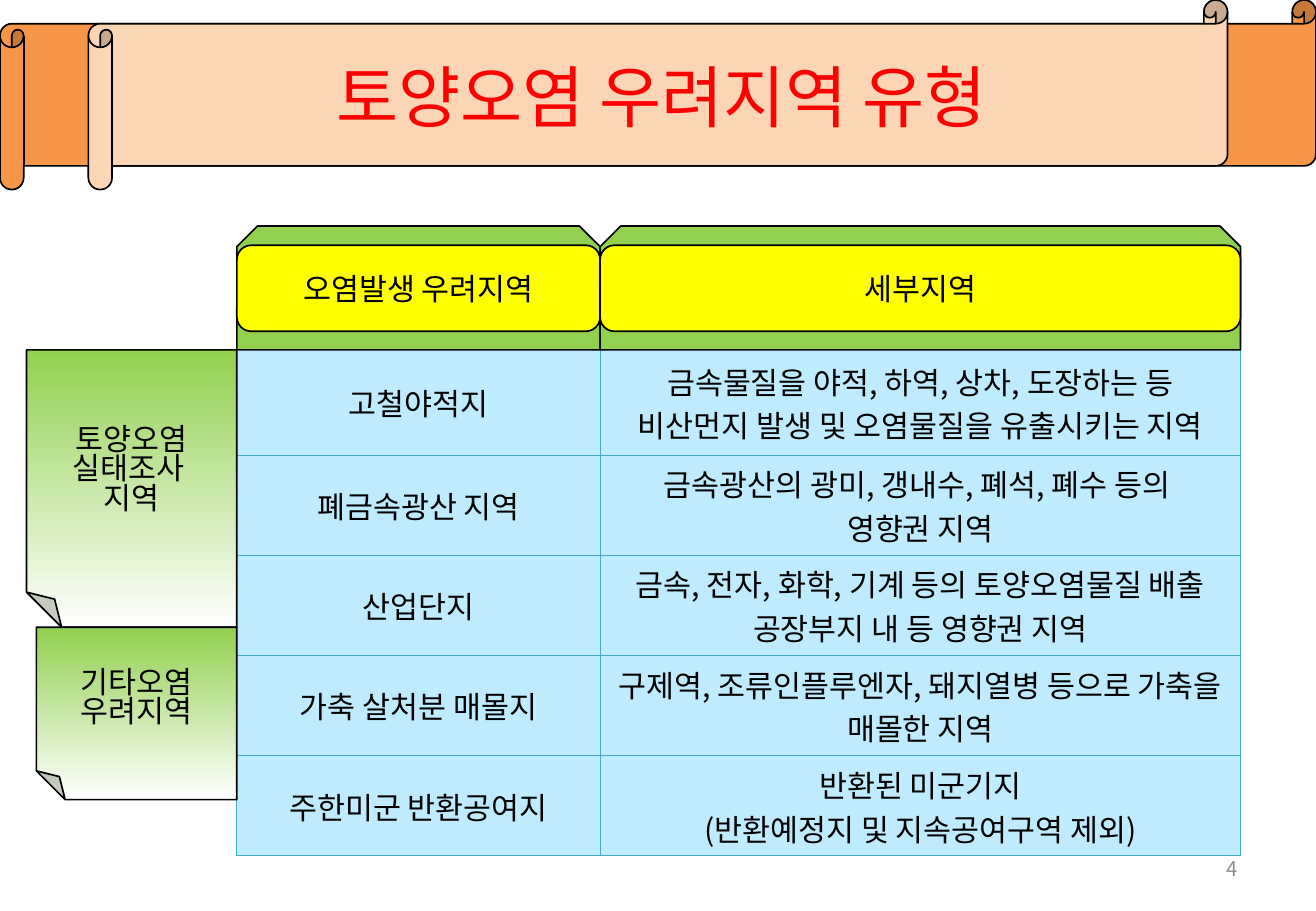
from dataclasses import dataclass

from lxml import etree
from pptx import Presentation
from pptx.dml.color import RGBColor
from pptx.enum.shapes import MSO_SHAPE
from pptx.enum.text import MSO_ANCHOR, PP_ALIGN
from pptx.oxml.ns import qn
from pptx.util import Pt


@dataclass(frozen=True)
class Theme:
    font: str = "Noto Sans CJK KR"
    title_size: int = 40
    body_size: int = 18
    number_size: int = 12
    black: str = "000000"
    red: str = "FF0000"
    gray: str = "8C8C8C"
    white: str = "FFFFFF"
    orange: str = "F79646"
    peach: str = "FCD5B5"
    green: str = "92D050"
    yellow: str = "FFFF00"
    sky: str = "BFEBFF"
    border: str = "46AAC5"


THEME = Theme()

# Shared layout in points: the table columns also carry the headings
TABLE_LEFT, TABLE_TOP = 140.4, 207.4
COLUMN_WIDTHS = (215.3, 379.6)
ROW_HEIGHTS = (62.6, 46, 46, 46, 46)

HEADINGS = ("오염발생 우려지역", "세부지역")
AREAS = (
    ("고철야적지", "금속물질을 야적, 하역, 상차, 도장하는 등 비산먼지 발생 및 오염물질을 유출시키는 지역"),
    ("폐금속광산 지역", "금속광산의 광미, 갱내수, 폐석, 폐수 등의 \n영향권 지역"),
    ("산업단지", "금속, 전자, 화학, 기계 등의 토양오염물질 배출 공장부지 내 등 영향권 지역"),
    ("가축 살처분 매몰지", "구제역, 조류인플루엔자, 돼지열병 등으로 가축을 매몰한 지역"),
    ("주한미군 반환공여지", "반환된 미군기지\n(반환예정지 및 지속공여구역 제외)"),
)
# Text, left, top, height of each group label
GROUPS = (
    ("토양오염\n실태조사 \n지역", 15.8, 207.4, 164.4),
    ("기타오염\n우려지역", 21.6, 371.8, 102.2),
)


def write_text(text_frame, text, size=THEME.body_size, color=THEME.black,
               align=PP_ALIGN.CENTER, line_spacing=1.0):
    text_frame.word_wrap = True
    text_frame.vertical_anchor = MSO_ANCHOR.MIDDLE
    text_frame.text = text
    for paragraph in text_frame.paragraphs:
        paragraph.alignment = align
        paragraph.line_spacing = line_spacing
        paragraph.space_before = Pt(0)
        for run in paragraph.runs:
            run.font.name = THEME.font
            run.font.size = Pt(size)
            run.font.color.rgb = RGBColor.from_string(color)
            east_asian = etree.SubElement(run.font._element, qn("a:ea"))
            east_asian.set("typeface", THEME.font)


def add_box(slide, kind, left, top, width, height, fill):
    shape = slide.shapes.add_shape(kind, Pt(left), Pt(top), Pt(width), Pt(height))
    shape.shadow.inherit = False
    shape.fill.solid()
    shape.fill.fore_color.rgb = RGBColor.from_string(fill)
    shape.line.color.rgb = RGBColor.from_string(THEME.black)
    shape.line.width = Pt(1)
    return shape


def add_title(slide, text):
    add_box(slide, MSO_SHAPE.HORIZONTAL_SCROLL, 0, 0, 780, 112.4, THEME.orange)
    add_box(slide, MSO_SHAPE.HORIZONTAL_SCROLL, 52.4, 0, 675.2, 112.4, THEME.peach)
    title = slide.shapes.title
    title.left, title.top, title.width, title.height = Pt(41), Pt(11.5), Pt(702), Pt(90)
    write_text(title.text_frame, text, size=THEME.title_size, color=THEME.red)
    # Bring the title in front of the scrolls
    slide.shapes._spTree.append(title._element)


def add_heading(slide, text, left, width):
    add_box(slide, MSO_SHAPE.SNIP_2_SAME_RECTANGLE, left, 134, width, 73.4, THEME.green)
    label = add_box(slide, MSO_SHAPE.ROUNDED_RECTANGLE, left, 145.4, width, 51, THEME.yellow)
    write_text(label.text_frame, text)


def add_group_label(slide, text, left, top, height):
    shape = add_box(slide, MSO_SHAPE.FOLDED_CORNER, left, top, TABLE_LEFT - left,
                    height, THEME.green)
    shape._element.spPr.get_or_add_xfrm().set("flipH", "1")
    shape.fill.gradient()
    shape.fill.gradient_angle = 270
    for stop, position, color in zip(shape.fill.gradient_stops, (0, 1),
                                     (THEME.green, THEME.white)):
        stop.position = position
        stop.color.rgb = RGBColor.from_string(color)
    write_text(shape.text_frame, text, line_spacing=0.82)


def set_borders(cell):
    properties = cell._tc.get_or_add_tcPr()
    for index, side in enumerate(("a:lnL", "a:lnR", "a:lnT", "a:lnB")):
        line = etree.Element(qn(side), w=str(Pt(0.75)))
        fill = etree.SubElement(line, qn("a:solidFill"))
        etree.SubElement(fill, qn("a:srgbClr"), val=THEME.border)
        properties.insert(index, line)


def add_area_table(slide):
    frame = slide.shapes.add_table(
        len(AREAS), len(COLUMN_WIDTHS), Pt(TABLE_LEFT), Pt(TABLE_TOP),
        Pt(sum(COLUMN_WIDTHS)), Pt(sum(ROW_HEIGHTS)))
    table = frame.table
    table.first_row = table.horz_banding = False
    for column, width in zip(table.columns, COLUMN_WIDTHS):
        column.width = Pt(width)
    for row, height, texts in zip(table.rows, ROW_HEIGHTS, AREAS):
        row.height = Pt(height)
        for cell, text in zip(row.cells, texts):
            cell.fill.solid()
            cell.fill.fore_color.rgb = RGBColor.from_string(THEME.sky)
            cell.vertical_anchor = MSO_ANCHOR.MIDDLE
            write_text(cell.text_frame, text)
            set_borders(cell)


def add_page_number(slide, number):
    box = slide.shapes.add_textbox(Pt(558.7), Pt(500.4), Pt(182.2), Pt(28.8))
    write_text(box.text_frame, number, size=THEME.number_size, color=THEME.gray,
               align=PP_ALIGN.RIGHT)


def main():
    presentation = Presentation()
    presentation.slide_width, presentation.slide_height = Pt(780), Pt(540)
    slide = presentation.slides.add_slide(presentation.slide_layouts[5])

    # Title banner
    add_title(slide, "토양오염 우려지역 유형")

    # Table and page number
    add_area_table(slide)
    add_page_number(slide, "4")

    # Column headings
    left = TABLE_LEFT
    for text, width in zip(HEADINGS, COLUMN_WIDTHS):
        add_heading(slide, text, left, width)
        left += width

    # Group labels beside the table
    for group in GROUPS:
        add_group_label(slide, *group)

    presentation.save("out.pptx")


if __name__ == "__main__":
    main()
